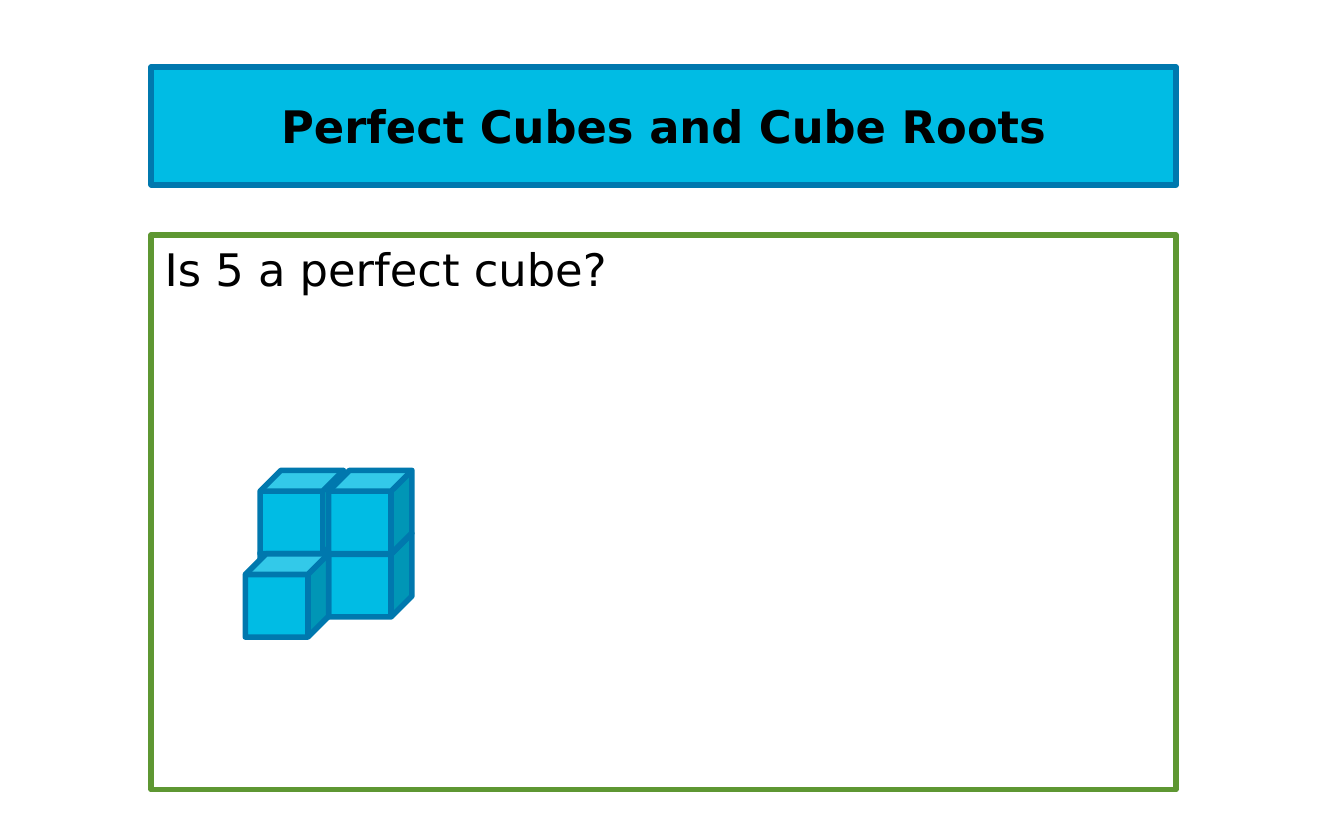
import pptx
import pptx.dml.color
import pptx.enum.shapes
import pptx.enum.text
import pptx.oxml.ns
import pptx.util
from lxml import etree

SKY = pptx.dml.color.RGBColor(0x00, 0xBC, 0xE4)
BLUE = pptx.dml.color.RGBColor(0x00, 0x78, 0xAE)
GREEN = pptx.dml.color.RGBColor(0x5E, 0x97, 0x32)
BLACK = pptx.dml.color.RGBColor(0, 0, 0)

WIDTH, HEIGHT = 10, 6.25
MARGIN, CONTENT_WIDTH = 1.125, 7.625
CUBE = 0.62
# Left and top of each cube within the pile, back to front
CUBE_OFFSETS = [(0.11, 0.46), (0.11, 0), (0.62, 0.47), (0, 0.62), (0.62, 0)]


def place(shape, box):
    shape.left, shape.top, shape.width, shape.height = map(pptx.util.Inches, box)


def outline(shape, color):
    shape.line.color.rgb = color
    shape.line.width = pptx.util.Pt(3)


def write(shape, text, *, align, anchor, bold=False):
    frame = shape.text_frame
    frame.auto_size = pptx.enum.text.MSO_AUTO_SIZE.NONE
    frame.word_wrap = True
    frame.vertical_anchor = anchor
    paragraph = frame.paragraphs[0]
    paragraph.text = text
    paragraph.alignment = align
    paragraph.space_before = pptx.util.Pt(0)
    properties = paragraph._p.get_or_add_pPr()
    properties.set("marL", "0")
    properties.set("indent", "0")
    etree.SubElement(properties, pptx.oxml.ns.qn("a:buNone"))
    font = paragraph.runs[0].font
    font.name = "DejaVu Sans"
    font.size = pptx.util.Pt(24)
    font.bold = bold
    font.color.rgb = BLACK


def title_banner(slide, box):
    banner = slide.shapes.title
    place(banner, box)
    banner.fill.solid()
    banner.fill.fore_color.rgb = SKY
    outline(banner, BLUE)
    write(banner, "Perfect Cubes and Cube Roots", bold=True,
          align=pptx.enum.text.PP_ALIGN.CENTER,
          anchor=pptx.enum.text.MSO_ANCHOR.MIDDLE)


def question_panel(slide, box):
    question = slide.placeholders[1]
    place(question, box)
    question.fill.background()
    outline(question, GREEN)
    write(question, "Is 5 a perfect cube?",
          align=pptx.enum.text.PP_ALIGN.LEFT,
          anchor=pptx.enum.text.MSO_ANCHOR.TOP)
    # Five unit cubes, too few for a full 2 x 2 x 2 block
    left, top, _, _ = box
    cube_pile(slide, left + 0.7, top + 1.75)


def cube_pile(slide, left, top):
    for across, down in CUBE_OFFSETS:
        cube = slide.shapes.add_shape(
            pptx.enum.shapes.MSO_SHAPE.CUBE, 0, 0, 0, 0)
        place(cube, (left + across, top + down, CUBE, CUBE))
        cube.shadow.inherit = False
        cube.fill.solid()
        cube.fill.fore_color.rgb = SKY
        outline(cube, BLUE)


def main():
    deck = pptx.Presentation()
    deck.slide_width = pptx.util.Inches(WIDTH)
    deck.slide_height = pptx.util.Inches(HEIGHT)
    slide = deck.slides.add_slide(deck.slide_layouts[1])
    title_banner(slide, (MARGIN, 0.08 * HEIGHT, CONTENT_WIDTH, 0.14 * HEIGHT))
    question_panel(slide, (MARGIN, 0.28 * HEIGHT, CONTENT_WIDTH, 0.66 * HEIGHT))
    deck.save("out.pptx")


if __name__ == "__main__":
    main()
